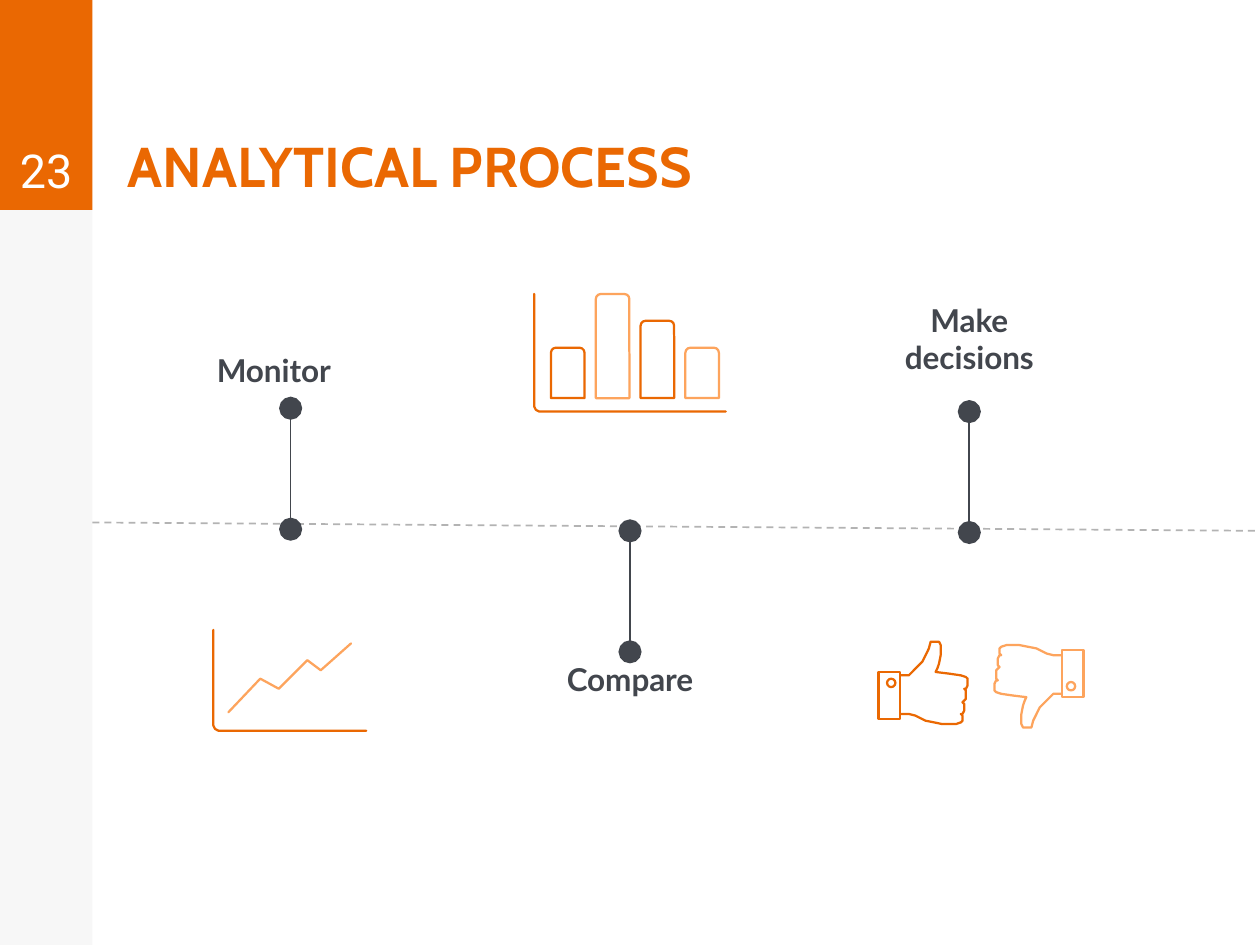
from lxml.etree import SubElement
from pptx import Presentation
from pptx.dml.color import RGBColor
from pptx.enum.dml import MSO_LINE
from pptx.enum.shapes import MSO_CONNECTOR, MSO_SHAPE as SHAPE
from pptx.enum.text import MSO_ANCHOR as ANCHOR, PP_ALIGN as ALIGN
from pptx.oxml.ns import qn
from pptx.util import Inches, Pt

ORANGE = RGBColor(0xEA, 0x68, 0x02)
LIGHT_ORANGE = RGBColor(0xFD, 0xA4, 0x5D)
DARK = RGBColor(0x42, 0x46, 0x4D)
GRAY = RGBColor(0xB3, 0xB3, 0xB3)
PALE = RGBColor(0xF7, 0xF7, 0xF7)
WHITE = RGBColor(0xFF, 0xFF, 0xFF)

WIDTH = 7.5
HEIGHT = WIDTH * 3 / 4


class SlideBuilder:
    inset = Inches(0.07)
    icon_width = Pt(0.96)
    line_width = Pt(0.75)

    def __init__(self, slide):
        self.shapes = slide.shapes

    def block(self, box, color):
        sp = self.shapes.add_shape(SHAPE.RECTANGLE, *map(Inches, box))
        sp.shadow.inherit = False
        sp.fill.solid()
        sp.fill.fore_color.rgb = color
        sp.line.fill.background()

    def text(self, box, text, font, size, color, bold=False,
             align=ALIGN.CENTER, anchor=ANCHOR.TOP):
        tf = self.shapes.add_textbox(*map(Inches, box)).text_frame
        tf.word_wrap = True
        tf.vertical_anchor = anchor
        tf.margin_left = tf.margin_right = self.inset
        tf.margin_top = tf.margin_bottom = self.inset
        p = tf.paragraphs[0]
        p.text = text
        p.alignment = align
        p.font.name = font
        p.font.size = Pt(size)
        p.font.bold = bold
        p.font.color.rgb = color

    def line(self, start, end, color, dashed=False, dots=False):
        cxn = self.shapes.add_connector(
            MSO_CONNECTOR.STRAIGHT, *map(Inches, (*start, *end)))
        cxn.line.color.rgb = color
        cxn.line.width = self.line_width
        if dashed:
            cxn.line.dash_style = MSO_LINE.DASH
        spPr = cxn._element.spPr
        if dots:
            for tag in ("a:headEnd", "a:tailEnd"):
                SubElement(spPr.get_or_add_ln(), qn(tag),
                           type="oval", w="lg", len="lg")
        SubElement(spPr, qn("a:effectLst"))

    def stroke(self, sp, color):
        sp.shadow.inherit = False
        sp.fill.background()
        sp.line.color.rgb = color
        sp.line.width = self.icon_width
        sp._element.spPr.get_or_add_ln().set("cap", "rnd")

    def outline(self, kind, box, color):
        sp = self.shapes.add_shape(kind, *map(Inches, box))
        self.stroke(sp, color)
        return sp

    def path_line(self, points, color):
        points = [(Inches(x), Inches(y)) for x, y in points]
        fb = self.shapes.build_freeform(*points[0])
        fb.add_line_segments(points[1:], close=False)
        self.stroke(fb.convert_to_shape(), color)

    def axes(self, left, top, right, bottom):
        self.path_line([(left, top), (left, bottom - 0.03),
                        (left + 0.01, bottom - 0.01), (left + 0.03, bottom),
                        (right, bottom)], ORANGE)

    def bar(self, left, top, bottom, color):
        sp = self.outline(SHAPE.ROUND_2_SAME_RECTANGLE,
                          (left, top, 0.2, bottom - top), color)
        sp.adjustments[0] = 0.15

    def thumb(self, color, turned=False):
        def place(x, y, w=0, h=0):
            return (11.68 - x - w, 8.15 - y - h) if turned else (x, y)

        for kind, (x, y, w, h) in ((SHAPE.RECTANGLE, CUFF), (SHAPE.OVAL, BUTTON)):
            self.outline(kind, (*place(x, y, w, h), w, h), color)
        self.path_line([place(x, y) for x, y in HAND], color)


# Thumb-up icon geometry
CUFF = (5.23, 4, 0.13, 0.28)
BUTTON = (5.28, 4.04, 0.05, 0.05)
HAND = [
    (5.36, 4.25), (5.41, 4.25), (5.45, 4.26), (5.51, 4.29), (5.56, 4.3),
    (5.61, 4.31), (5.64, 4.31), (5.69, 4.31), (5.72, 4.3), (5.73, 4.29),
    (5.73, 4.26), (5.72, 4.25), (5.73, 4.25), (5.74, 4.23), (5.74, 4.19),
    (5.73, 4.18), (5.74, 4.17), (5.75, 4.16), (5.75, 4.11), (5.74, 4.1),
    (5.75, 4.1), (5.76, 4.08), (5.76, 4.04), (5.75, 4.03), (5.72, 4.02),
    (5.65, 4.01), (5.57, 4), (5.58, 3.98), (5.59, 3.95), (5.6, 3.9),
    (5.6, 3.84), (5.59, 3.82), (5.57, 3.82), (5.54, 3.82), (5.53, 3.86),
    (5.51, 3.9), (5.49, 3.94), (5.45, 3.98), (5.41, 4.02), (5.36, 4.02),
]


def main():
    prs = Presentation()
    prs.slide_width, prs.slide_height = Inches(WIDTH), Inches(HEIGHT)
    s = SlideBuilder(prs.slides.add_slide(prs.slide_layouts[6]))

    # Sidebar, page number and title
    number_box = (0, 0, 0.55, 1.25)
    s.block((0, 0, 0.55, HEIGHT), PALE)
    s.block(number_box, ORANGE)
    s.text((0.69, 0, 3.7, 1.25), "ANALYTICAL PROCESS", "Cabin", 24, ORANGE,
           bold=True, align=ALIGN.LEFT, anchor=ANCHOR.BOTTOM)
    s.text(number_box, "23", "Roboto", 20, WHITE, anchor=ANCHOR.BOTTOM)

    # Timeline with its three steps
    s.line((0.55, 3.11), (WIDTH, 3.16), GRAY, dashed=True)
    steps = [("Monitor", 1.12, 2.02, -0.72),
             ("Compare", 3.24, 3.86, 0.72),
             ("Make decisions", 5.26, 1.72, -0.72)]
    for i, (label, left, top, rise) in enumerate(steps):
        x, y = 1.73 + 2.02 * i, 3.15 + 0.01 * i
        s.line((x, y), (x, y + rise), DARK, dots=True)
        s.text((left, top, 1.02, 0.34), label, "Lato", 13.5, DARK, bold=True)

    # Line chart icon
    s.axes(1.27, 3.75, 2.18, 4.35)
    s.path_line([(1.36, 4.24), (1.55, 4.04), (1.66, 4.1), (1.83, 3.93),
                 (1.91, 3.99), (2.09, 3.83)], LIGHT_ORANGE)

    # Bar chart icon
    s.axes(3.18, 1.75, 4.32, 2.45)
    for i, top in enumerate((2.07, 1.75, 1.91, 2.07)):
        s.bar(3.28 + 0.8 / 3 * i, top, 2.37, LIGHT_ORANGE if i % 2 else ORANGE)

    # Thumb icons
    s.thumb(ORANGE)
    s.thumb(LIGHT_ORANGE, turned=True)

    prs.save("out.pptx")


if __name__ == "__main__":
    main()
